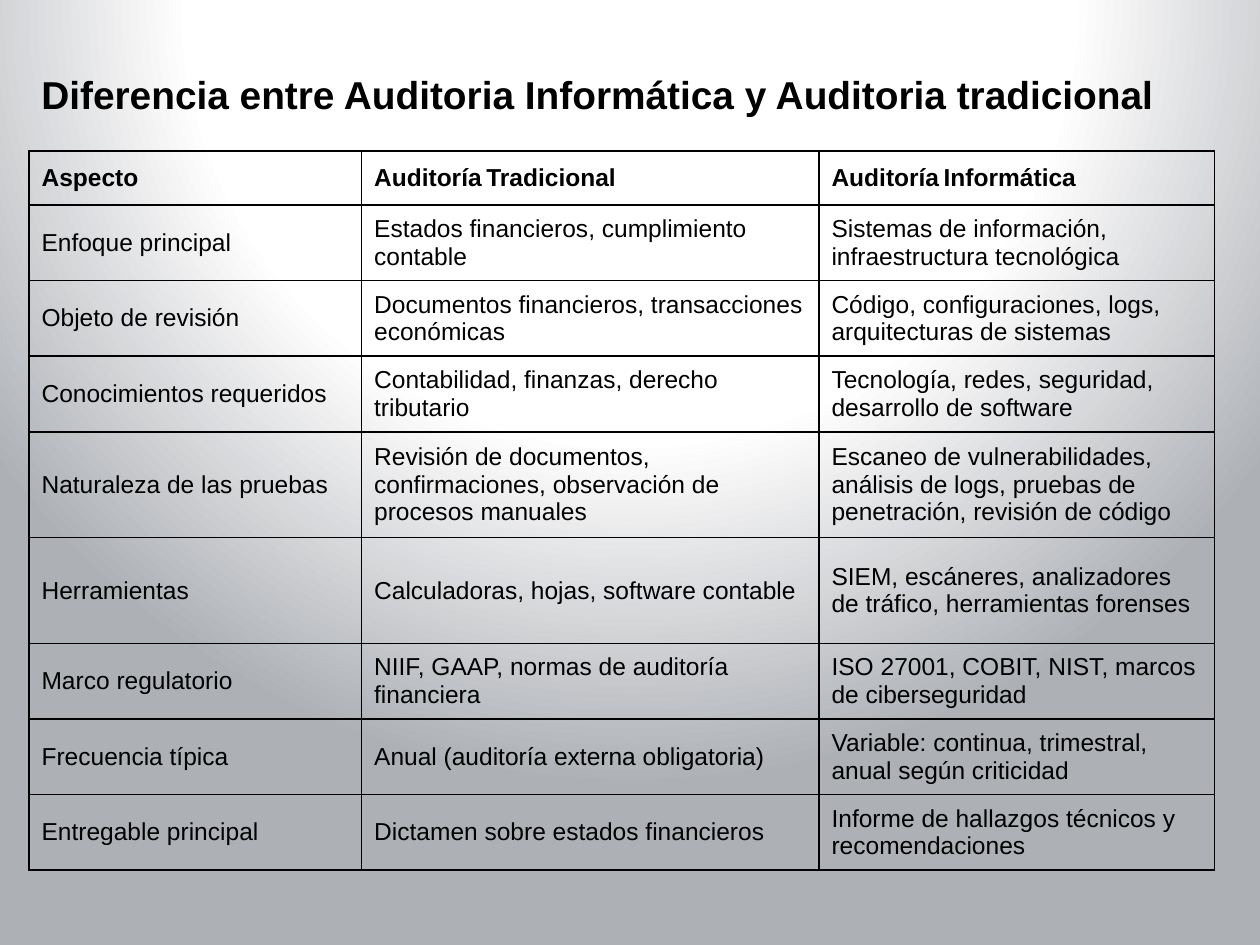
from typing import NamedTuple

from lxml import etree
from pptx import Presentation
from pptx.dml.color import RGBColor
from pptx.enum.text import MSO_ANCHOR
from pptx.oxml import parse_xml
from pptx.oxml.ns import qn
from pptx.util import Emu, Inches, Pt

MIDDLE = MSO_ANCHOR.MIDDLE
COLORS = {"ink": "000000", "light": "FFFFFF", "shade": "ADB0B5"}
GRADIENT_STOPS = ((0, "light"), (56, "light"), (100, "shade"))
SLIDE_WIDTH, SLIDE_HEIGHT = Inches(10), Inches(7.5)
LEFT = 0.023
COLUMN_SHARES = (0.264, 0.363, 0.314)
HEADER_ROW, SHORT_ROW, TALL_ROW = 0.057, 0.08, 0.112
BORDER_SIDES = ("a:lnL", "a:lnR", "a:lnT", "a:lnB")


class Aspect(NamedTuple):
    name: str
    traditional: str
    informatic: str
    height: float = SHORT_ROW


HEADER = Aspect("Aspecto", "Auditoría Tradicional", "Auditoría Informática", HEADER_ROW)
ASPECTS = (
    Aspect("Enfoque principal", "Estados financieros, cumplimiento contable",
           "Sistemas de información, infraestructura tecnológica"),
    Aspect("Objeto de revisión", "Documentos financieros, transacciones económicas",
           "Código, configuraciones, logs, arquitecturas de sistemas"),
    Aspect("Conocimientos requeridos", "Contabilidad, finanzas, derecho tributario",
           "Tecnología, redes, seguridad, desarrollo de software"),
    Aspect("Naturaleza de las pruebas",
           "Revisión de documentos, confirmaciones, observación de procesos manuales",
           "Escaneo de vulnerabilidades, análisis de logs, pruebas de penetración, revisión de código",
           TALL_ROW),
    Aspect("Herramientas", "Calculadoras, hojas, software contable",
           "SIEM, escáneres, analizadores de tráfico, herramientas forenses", TALL_ROW),
    Aspect("Marco regulatorio", "NIIF, GAAP, normas de auditoría financiera",
           "ISO 27001, COBIT, NIST, marcos de ciberseguridad"),
    Aspect("Frecuencia típica", "Anual (auditoría externa obligatoria)",
           "Variable: continua, trimestral, anual según criticidad"),
    Aspect("Entregable principal", "Dictamen sobre estados financieros",
           "Informe de hallazgos técnicos y recomendaciones"),
)


def across(share: float) -> Emu:
    return Emu(round(SLIDE_WIDTH * share))


def down(share: float) -> Emu:
    return Emu(round(SLIDE_HEIGHT * share))


def write(para, text: str, *, size: float = 14, font: str = "Arial", bold: bool = False) -> None:
    span = para.add_run()
    span.text = text
    span.font.size = Pt(size)
    span.font.name = font
    span.font.bold = bold
    span.font.color.rgb = RGBColor.from_string(COLORS["ink"])


def paint_background(page) -> None:
    stops = "".join(
        f'<a:gs pos="{position * 1000}"><a:srgbClr val="{COLORS[color]}"/></a:gs>'
        for position, color in GRADIENT_STOPS
    )
    background = parse_xml(
        '<p:bg xmlns:p="http://schemas.openxmlformats.org/presentationml/2006/main" '
        'xmlns:a="http://schemas.openxmlformats.org/drawingml/2006/main">'
        f'<p:bgPr><a:gradFill rotWithShape="1"><a:gsLst>{stops}</a:gsLst>'
        '<a:path path="circle"><a:fillToRect l="50000" t="-80000" r="50000" b="180000"/></a:path>'
        '</a:gradFill><a:effectLst/></p:bgPr></p:bg>'
    )
    page.element.cSld.insert(0, background)


def draw_borders(cell) -> None:
    properties = cell._tc.get_or_add_tcPr()
    for side in BORDER_SIDES:
        line = etree.SubElement(properties, qn(side), w=str(Pt(1)))
        fill = etree.SubElement(line, qn("a:solidFill"))
        etree.SubElement(fill, qn("a:srgbClr"), val=COLORS["ink"])


def fill_cell(cell, text: str, *, bold: bool) -> None:
    draw_borders(cell)
    cell.fill.background()
    cell.vertical_anchor = MIDDLE
    para = cell.text_frame.paragraphs[0]
    if not bold:
        write(para, text)
        return
    for index, word in enumerate(text.split()):
        if index:
            write(para, " ", size=11, font="Cambria", bold=True)
        write(para, word, bold=True)


def draw_title(page, text: str) -> None:
    box = page.shapes.add_textbox(across(LEFT), down(0.063), across(0.922), down(0.073))
    frame = box.text_frame
    frame.word_wrap = True
    frame.vertical_anchor = MIDDLE
    write(frame.paragraphs[0], text, size=22.2, bold=True)


def draw_comparison(page) -> None:
    rows = (HEADER, *ASPECTS)
    table = page.shapes.add_table(
        len(rows), len(COLUMN_SHARES), across(LEFT), down(0.16),
        across(sum(COLUMN_SHARES)), down(sum(row.height for row in rows)),
    ).table
    table.first_row = False
    table.horz_banding = False
    for column, share in zip(table.columns, COLUMN_SHARES):
        column.width = across(share)
    for table_row, row in zip(table.rows, rows):
        table_row.height = down(row.height)
        texts = (row.name, row.traditional, row.informatic)
        for cell, text in zip(table_row.cells, texts):
            fill_cell(cell, text, bold=row is HEADER)


def main() -> None:
    deck = Presentation()
    deck.slide_width, deck.slide_height = SLIDE_WIDTH, SLIDE_HEIGHT
    page = deck.slides.add_slide(deck.slide_layouts[6])
    paint_background(page)
    draw_title(page, "Diferencia entre Auditoria Informática y Auditoria tradicional")
    draw_comparison(page)
    deck.save("out.pptx")


if __name__ == "__main__":
    main()
